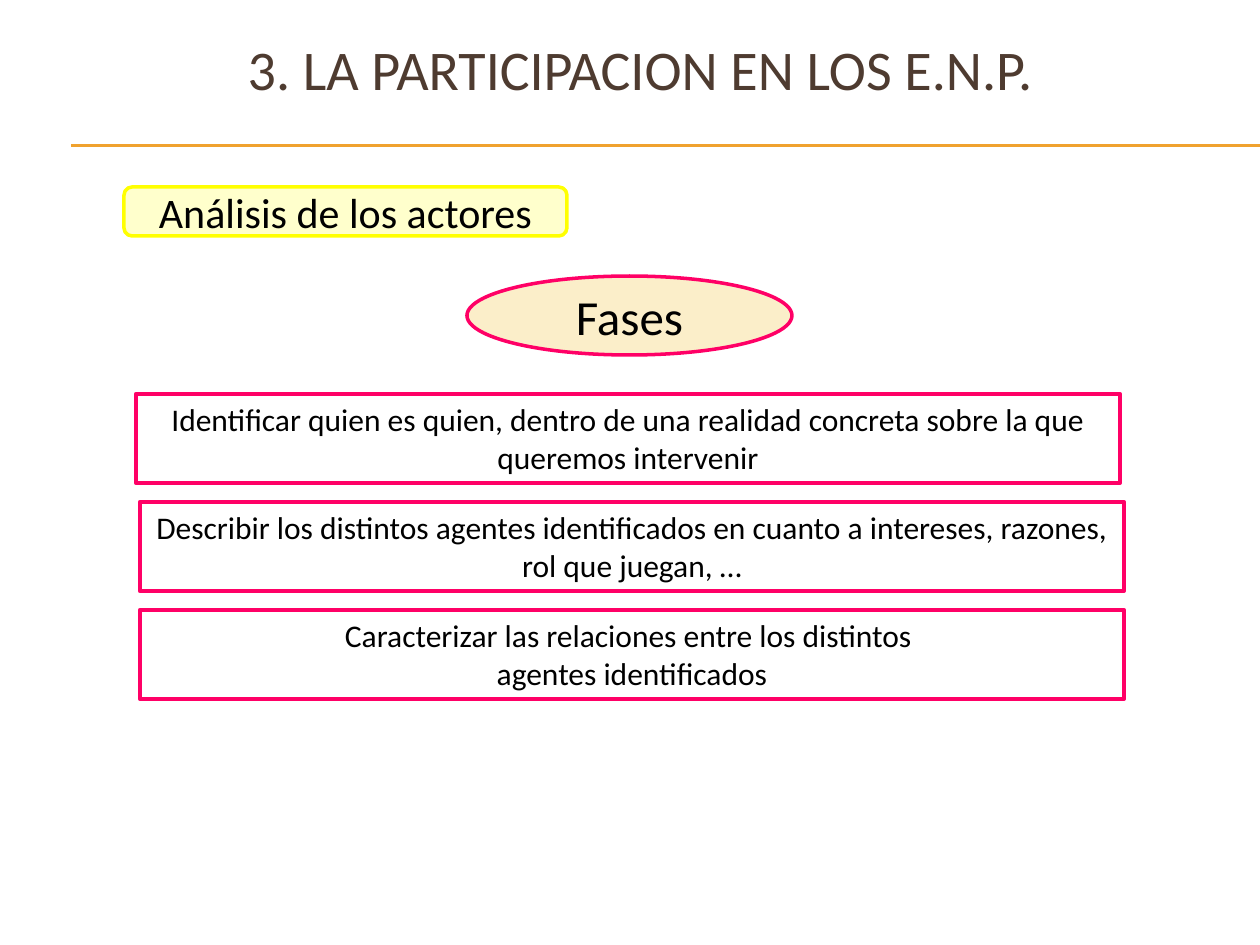
"""Builds the slide on the phases of stakeholder analysis."""
from lxml import etree
from pptx import Presentation
from pptx.dml.color import RGBColor
from pptx.enum.shapes import MSO_CONNECTOR, MSO_SHAPE
from pptx.enum.text import MSO_ANCHOR, PP_ALIGN
from pptx.oxml.ns import qn
from pptx.util import Emu, Pt

TITLE = "3. LA PARTICIPACION EN LOS E.N.P."
TOPIC = "Análisis de los actores"
HEADING = "Fases"
PHASES = [
    (136, ["Identificar quien es quien, dentro de una realidad concreta sobre la que queremos intervenir"]),
    (140, ["Describir los distintos agentes identificados en cuanto a intereses, razones, rol que juegan, …"]),
    (140, ["Caracterizar las relaciones entre los distintos ", "agentes identificados"]),
]
PHASE_TOP, PHASE_STEP, PHASE_WIDTH, PHASE_HEIGHT = 394, 108, 984, 89
RULE_LEFT, RULE_RIGHT, RULE_TOPS = 71, 1260, (145, 146)
FONT = "Calibri"
BLACK, BROWN, ORANGE, PINK = "000000", "4E3B30", "F0A22E", "FF0066"


def px(length):
    return Emu(round(length * 914400 / 126))


def color(value):
    return RGBColor.from_string(value)


def write(shape, lines, size, ink=BLACK, anchor=MSO_ANCHOR.MIDDLE):
    frame = shape.text_frame
    frame.word_wrap = True
    frame.vertical_anchor = anchor
    frame.text = "\n".join(lines)
    for paragraph in frame.paragraphs:
        paragraph.alignment = PP_ALIGN.CENTER
        paragraph.font.name = FONT
        paragraph.font.size = Pt(size)
        paragraph.font.color.rgb = color(ink)


def add_box(page, kind, bounds, fill, outline, width):
    box = page.shapes.add_shape(kind, *map(px, bounds))
    box.shadow.inherit = False
    box.fill.solid()
    box.fill.fore_color.rgb = color(fill)
    box.line.color.rgb = color(outline)
    box.line.width = Pt(width)
    return box


def add_rule(page, top):
    rule = page.shapes.add_connector(
        MSO_CONNECTOR.STRAIGHT, px(RULE_LEFT), px(top), px(RULE_RIGHT), px(top))
    rule.line.color.rgb = color(ORANGE)
    rule.line.width = Pt(0.75)
    etree.SubElement(rule._element.spPr, qn("a:effectLst"))


def main():
    deck = Presentation()
    deck.slide_width, deck.slide_height = px(1260), px(945)
    page = deck.slides.add_slide(deck.slide_layouts[6])

    for top in RULE_TOPS:
        add_rule(page, top)

    title = page.shapes.add_textbox(*map(px, (42, 10, 1197, 116)))
    write(title, [TITLE], 32, BROWN)

    topic = add_box(page, MSO_SHAPE.ROUNDED_RECTANGLE, (124, 187, 443, 49), "FFFFCC", "FFFF00", 2)
    write(topic, [TOPIC], 24)

    for index, (left, lines) in enumerate(PHASES):
        bounds = (left, PHASE_TOP + index * PHASE_STEP, PHASE_WIDTH, PHASE_HEIGHT)
        phase = add_box(page, MSO_SHAPE.RECTANGLE, bounds, "FFFFFF", PINK, 2.5)
        write(phase, lines, 18, anchor=MSO_ANCHOR.TOP)

    heading = add_box(page, MSO_SHAPE.OVAL, (467, 276, 325, 79), "FBEEC9", PINK, 2)
    write(heading, [HEADING], 28)

    deck.save("out.pptx")


if __name__ == "__main__":
    main()
